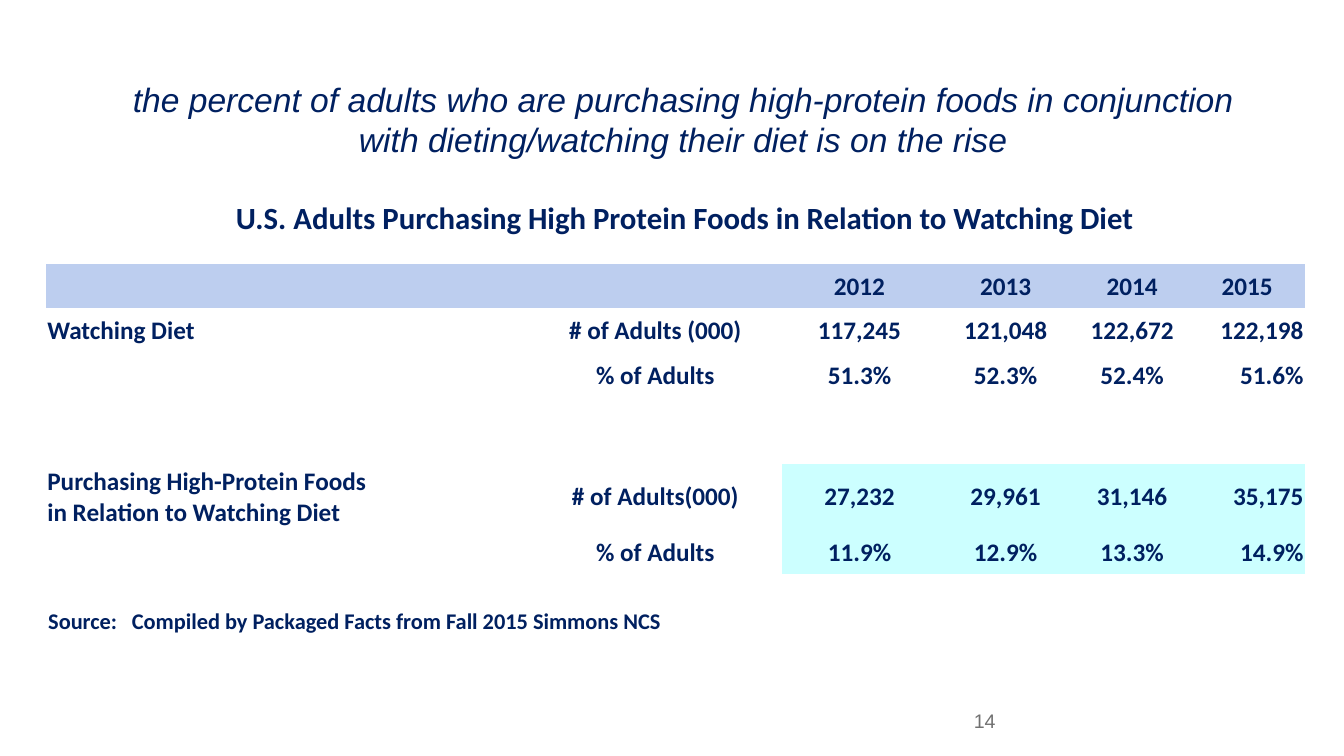
from lxml.etree import SubElement
from pptx import Presentation
from pptx.dml.color import RGBColor
from pptx.enum.text import MSO_ANCHOR, MSO_AUTO_SIZE, PP_ALIGN
from pptx.oxml.ns import qn
from pptx.util import Inches, Pt

COLORS = {"navy": "002060", "gray": "717171", "header": "BDCEEF",
          "highlight": "CCFFFF", "white": "FFFFFF"}
NO_GRID_STYLE = "{2D5ABB26-0587-4C30-8999-92F81FD0307C}"

COLUMN_WIDTHS = [4.78, 2.52, 1.53, 1.37, 1.14, 1.14]
ROW_HEIGHTS = [0.44, 0.44, 0.44, 0.66, 0.66, 0.44]
ROWS = [
    ["", "", "2012", "2013", "2014", "2015"],
    ["Watching Diet", "# of Adults (000)", "117,245", "121,048", "122,672", "122,198"],
    ["", "% of Adults", "51.3%", "52.3%", "52.4%", "51.6%"],
    [""] * 6,
    ["Purchasing High-Protein Foods\nin Relation to Watching Diet",
     "# of Adults(000)", "27,232", "29,961", "31,146", "35,175"],
    ["", "% of Adults", "11.9%", "12.9%", "13.3%", "14.9%"],
]


class SlideBuilder:
    def __init__(self, slide):
        self.slide = slide

    def set_text(self, paragraph, text, align=PP_ALIGN.LEFT, color="navy", **font_format):
        paragraph.text = text
        paragraph.alignment = align
        font_values = {"name": "Calibri", "size": 18, "bold": True, "italic": False}
        font_values.update(font_format)
        font_values["size"] = Pt(font_values["size"])
        for run in paragraph.runs:
            for attribute, value in font_values.items():
                setattr(run.font, attribute, value)
            run.font.color.rgb = RGBColor.from_string(COLORS[color])

    def fill_frame(self, shape, text, anchor, **text_format):
        frame = shape.text_frame
        frame.word_wrap = True
        frame.auto_size = MSO_AUTO_SIZE.NONE
        frame.vertical_anchor = anchor
        self.set_text(frame.paragraphs[0], text, **text_format)
        return frame.paragraphs[0]

    def add_title(self, text, box, **text_format):
        title = self.slide.shapes.title
        for attribute, length in zip(("left", "top", "width", "height"), box):
            setattr(title, attribute, Inches(length))
        self.fill_frame(title, text, MSO_ANCHOR.TOP, **text_format)

    def add_text(self, text, box, anchor=MSO_ANCHOR.MIDDLE, **text_format):
        shape = self.slide.shapes.add_textbox(*map(Inches, box))
        return self.fill_frame(shape, text, anchor, **text_format)

    def add_tab_stop(self, paragraph, position):
        properties = paragraph._p.get_or_add_pPr()
        tab_list = SubElement(properties, qn("a:tabLst"))
        SubElement(tab_list, qn("a:tab"), pos=str(Inches(position)), algn="l")

    def add_table(self, rows, box):
        shape = self.slide.shapes.add_table(
            len(rows), len(rows[0]), *map(Inches, box))
        table = shape.table
        table.first_row = table.horz_banding = False
        table._tbl.tblPr.find(qn("a:tableStyleId")).text = NO_GRID_STYLE
        for column, width in zip(table.columns, COLUMN_WIDTHS):
            column.width = Inches(width)
        for row, height in zip(table.rows, ROW_HEIGHTS):
            row.height = Inches(height)
        for row_index, row in enumerate(rows):
            for column_index, text in enumerate(row):
                self.style_cell(table.cell(row_index, column_index),
                                text, row_index, column_index)

    def style_cell(self, cell, text, row_index, column_index):
        cell_format = {"margin_left": Inches(0.01), "margin_right": Inches(0.01),
                       "margin_top": Inches(0.01), "margin_bottom": 0,
                       "vertical_anchor": MSO_ANCHOR.MIDDLE}
        for attribute, value in cell_format.items():
            setattr(cell, attribute, value)
        if row_index == 0:
            fill = "header"
        elif row_index >= 4 and column_index >= 2:
            fill = "highlight"
        else:
            fill = "white"
        cell.fill.solid()
        cell.fill.fore_color.rgb = RGBColor.from_string(COLORS[fill])
        align = PP_ALIGN.CENTER
        if column_index == 0:
            align = PP_ALIGN.LEFT
        elif column_index == 5 and row_index > 0:
            align = PP_ALIGN.RIGHT
        self.set_text(cell.text_frame.paragraphs[0], text, align)


def main():
    presentation = Presentation()
    presentation.slide_width = Inches(13.33)
    presentation.slide_height = Inches(7.5)
    title_only = presentation.slide_layouts[5]
    builder = SlideBuilder(presentation.slides.add_slide(title_only))

    builder.add_title(
        "the percent of adults who are purchasing high-protein foods in conjunction "
        "with dieting/watching their diet is on the rise",
        (1.17, 0.73, 11.21, 0.91), align=PP_ALIGN.CENTER,
        name="Arial", size=24, bold=False, italic=True)
    builder.add_text(
        "U.S. Adults Purchasing High Protein Foods in Relation to Watching Diet",
        (0.38, 1.92, 12.82, 0.47), MSO_ANCHOR.TOP, align=PP_ALIGN.CENTER, size=22)
    builder.add_table(ROWS, (0.46, 2.62, sum(COLUMN_WIDTHS), sum(ROW_HEIGHTS)))
    source = builder.add_text(
        "Source:\tCompiled by Packaged Facts from Fall 2015 Simmons NCS",
        (0.38, 5.97, 12.21, 0.37), size=16)
    builder.add_tab_stop(source, 0.83)
    builder.add_text("14", (9.56, 6.95, 3.11, 0.4), color="gray",
                     name="Arial", size=14, bold=False)
    presentation.save("out.pptx")


if __name__ == "__main__":
    main()
